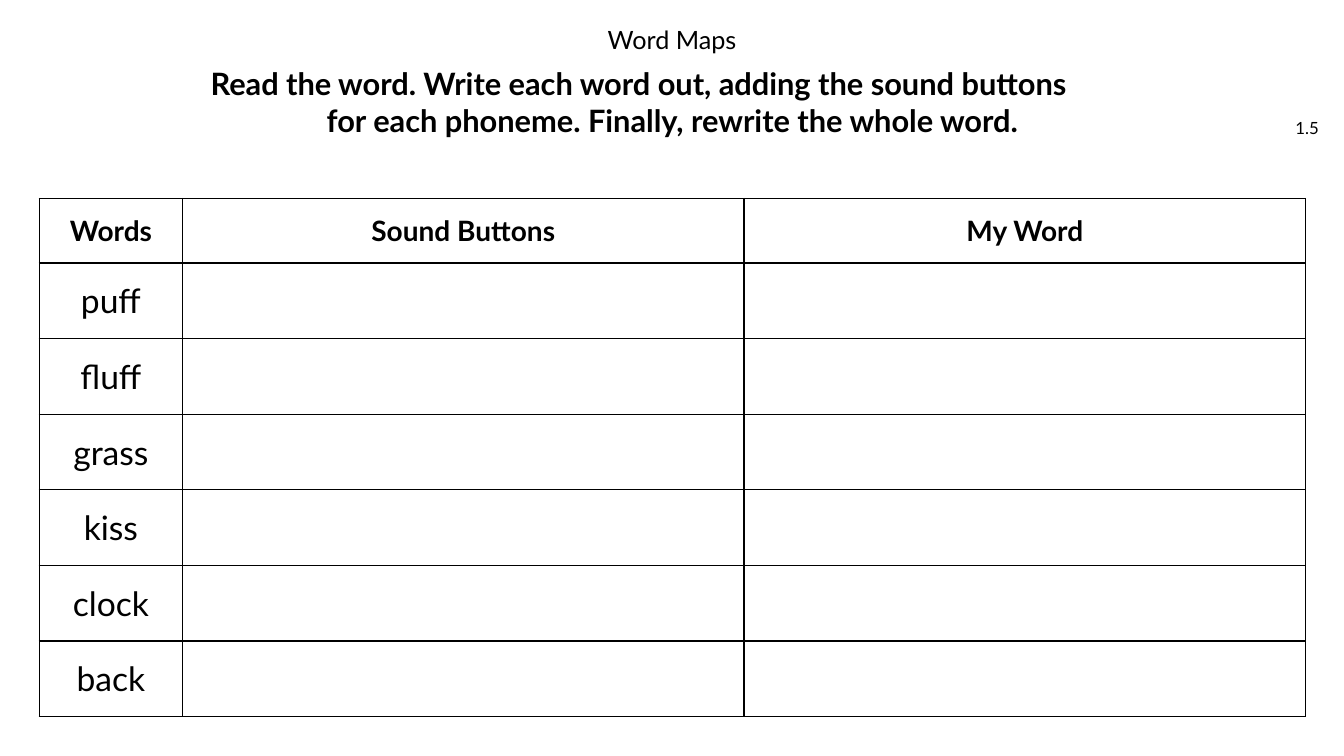
from lxml.etree import SubElement
from pptx import Presentation
from pptx.dml.color import RGBColor
from pptx.enum.text import MSO_ANCHOR as Anchor, PP_ALIGN as Align
from pptx.oxml.ns import qn
from pptx.util import Inches, Pt

WORDS = ["puff", "fluff", "grass", "kiss", "clock", "back"]
HEADINGS = ["Words", "Sound Buttons", "My Word"]
INSTRUCTION = [
    ("Read the word. Write each word out, adding the sound buttons", Align.LEFT),
    ("for each phoneme. Finally, rewrite the whole word.", Align.CENTER),
]


def colour(value):
    return RGBColor.from_string(value)


class Worksheet:
    font = "Lato"
    ink = "000000"
    paper = "FFFFFF"
    width = 13.33
    height = 7.5

    def __init__(self, presentation):
        presentation.slide_width = Inches(self.width)
        presentation.slide_height = Inches(self.height)
        self.slide = presentation.slides.add_slide(presentation.slide_layouts[6])
        self.slide.background.fill.solid()
        self.slide.background.fill.fore_color.rgb = colour(self.paper)

    def across(self, share):
        return Inches(self.width * share)

    def down(self, share):
        return Inches(self.height * share)

    def add_text_run(self, paragraph, text, size, bold=False, align=Align.CENTER):
        paragraph.alignment = align
        run = paragraph.add_run()
        run.text = text
        run.font.name = self.font
        run.font.size = Pt(size)
        run.font.bold = bold
        run.font.color.rgb = colour(self.ink)

    def add_text(self, left, top, width, height, lines, size, bold=False,
                 anchor=Anchor.MIDDLE, spacing=1.0):
        box = self.slide.shapes.add_textbox(
            self.across(left), self.down(top), self.across(width), self.down(height))
        frame = box.text_frame
        frame.word_wrap = True
        frame.vertical_anchor = anchor
        for index, (line, align) in enumerate(lines):
            paragraph = frame.add_paragraph() if index else frame.paragraphs[0]
            paragraph.line_spacing = spacing
            self.add_text_run(paragraph, line, size, bold, align)

    def add_border(self, cell):
        properties = cell._tc.get_or_add_tcPr()
        for position, side in enumerate(["lnL", "lnR", "lnT", "lnB"]):
            line = properties.makeelement(qn(f"a:{side}"), {"w": str(Pt(1))})
            properties.insert(position, line)
            fill = SubElement(line, qn("a:solidFill"))
            SubElement(fill, qn("a:srgbClr"), val=self.ink)

    def add_word_table(self, left, top, columns, rows, headings, words):
        shape = self.slide.shapes.add_table(
            len(rows), len(columns), self.across(left), self.down(top),
            self.across(sum(columns)), self.down(sum(rows)))
        table = shape.table
        table.horz_banding = False
        for column, share in zip(table.columns, columns):
            column.width = self.across(share)
        for row, share in zip(table.rows, rows):
            row.height = self.down(share)
        for cell in table.iter_cells():
            cell.vertical_anchor = Anchor.MIDDLE
            cell.fill.solid()
            cell.fill.fore_color.rgb = colour(self.paper)
            self.add_border(cell)
        for index, heading in enumerate(headings):
            self.add_text_run(table.cell(0, index).text_frame.paragraphs[0], heading, 20, True)
        for index, word in enumerate(words, 1):
            self.add_text_run(table.cell(index, 0).text_frame.paragraphs[0], word, 24)


def main():
    presentation = Presentation()
    sheet = Worksheet(presentation)
    width, height = sheet.width, sheet.height
    sheet.add_text(12.55 / width, 1.07 / height, 0.63 / width, 0.4 / height,
                   [("1.5", Align.RIGHT)], 12)
    sheet.add_text(1.99 / width, 0.6 / height, 9.36 / width, 0.82 / height,
                   INSTRUCTION, 22, bold=True)
    sheet.add_text(3.82 / width, 0.23 / height, 5.69 / width, 0.35 / height,
                   [("Word Maps", Align.CENTER)], 18, anchor=Anchor.TOP, spacing=0.9)
    sheet.add_word_table(0.39 / width, 1.97 / height,
                         [1.42 / width] + [5.57 / width] * 2,
                         [0.64 / height] + [0.75 / height] * len(WORDS),
                         HEADINGS, WORDS)
    presentation.save("out.pptx")


if __name__ == "__main__":
    main()
